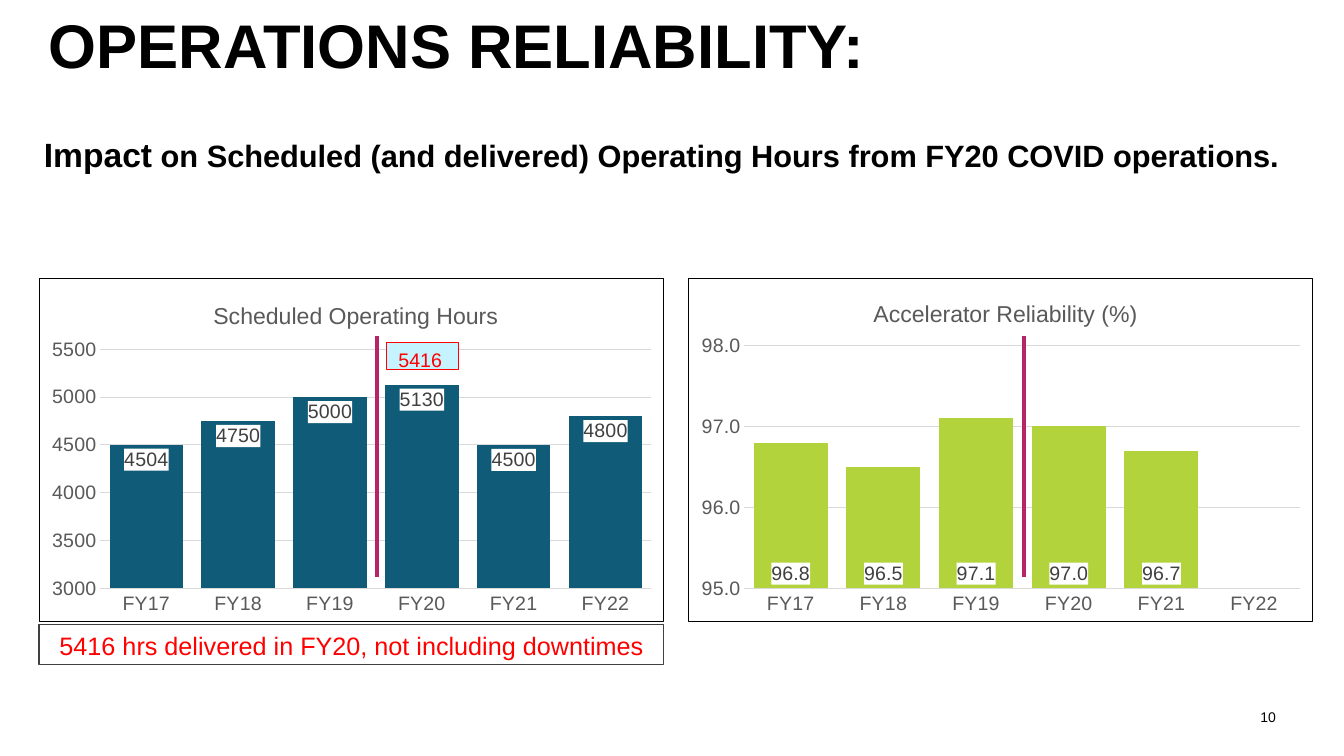
from pptx import Presentation, util as u
from pptx.chart.data import CategoryChartData
from pptx.dml.color import RGBColor
from pptx.enum import chart as ch, shapes, text
from pptx.oxml import parse_xml
from pptx.oxml.ns import nsdecls

TITLE = "OPERATIONS RELIABILITY:"
SUBTITLE = [("Impact", 24),
            (" on Scheduled (and delivered) Operating Hours from FY20 COVID operations.", 22)]
DELIVERED = "5416 "
CAPTION = "5416 hrs delivered in FY20, not including downtimes"
PAGE = "10"
YEARS = ["FY17", "FY18", "FY19", "FY20", "FY21", "FY22"]
# title_at and plot are measured in px on the slide
CHARTS = [
    dict(title="Scheduled Operating Hours", left=39, title_at=(209, 296),
         plot=(100, 349, 552, 240), values=[4504, 4750, 5000, 5130, 4500, 4800],
         axis=(3000, 5500, 500), fmt="0", color="hours",
         labels=ch.XL_LABEL_POSITION.INSIDE_END, covid_x=377),
    dict(title="Accelerator Reliability (%)", left=688, title_at=(869, 294),
         plot=(744, 345, 557, 244), values=[96.8, 96.5, 97.1, 97.0, 96.7, 0],
         axis=(95, 98, 1), fmt="0.0", color="reliability",
         labels=ch.XL_LABEL_POSITION.INSIDE_BASE, covid_x=1024),
]
CHART_TOP, CHART_W, CHART_H = 278, 625, 344
COVID_TOP, COVID_BOTTOM = 336, 577

THEME = dict(
    font="Arial", ink="000000", axis="595959", label="404040", grid="D9D9D9",
    hours="105C78", reliability="B2D33B", divider="B72467", alert="FF0000",
    callout="C5F3FF", caption_line="404040", white="FFFFFF",
    title_pt=44, chart_title_pt=16.5, chart_pt=14, caption_pt=18, page_pt=10,
)
SLIDE_W, SLIDE_H = 1344, 756
EMU_PER_PX = u.Inches(7.5) / SLIDE_H


def px(n):
    return u.Emu(round(n * EMU_PER_PX))


def rgb(name):
    return RGBColor.from_string(THEME[name])


def style_font(font, size, color, bold=False):
    font.name, font.size, font.bold = THEME["font"], u.Pt(size), bold
    font.color.rgb = rgb(color)


def style_line(line, color, width=0.75):
    line.color.rgb = rgb(color)
    line.width = u.Pt(width)


def write(sp, runs, color="ink", bold=False, align=text.PP_ALIGN.LEFT,
          anchor=text.MSO_ANCHOR.TOP):
    """Fill a shape with one paragraph of (text, size) runs."""
    tf = sp.text_frame
    tf.word_wrap, tf.vertical_anchor = True, anchor
    p = tf.paragraphs[0]
    p.alignment = align
    for words, size in runs:
        r = p.add_run()
        r.text = words
        style_font(r.font, size, color, bold)
    return tf


def add_text(slide, box, runs, **style):
    return write(slide.shapes.add_textbox(*map(px, box)), runs, **style)


def add_box(slide, box, words, size, line, fill=None):
    sp = slide.shapes.add_shape(shapes.MSO_SHAPE.RECTANGLE, *map(px, box))
    sp.shadow.inherit = False
    if fill:
        sp.fill.solid()
        sp.fill.fore_color.rgb = rgb(fill)
    else:
        sp.fill.background()
    style_line(sp.line, line)
    write(sp, [(words, size)], "alert", align=text.PP_ALIGN.CENTER)


def set_layout(parent, index, fractions, inner=False):
    """Give a chart element a manual place, as fractions of the chart frame."""
    for old in parent.xpath("c:layout"):
        parent.remove(old)
    target = '<c:layoutTarget val="inner"/>' if inner else ""
    modes = "".join(f'<c:{a}Mode val="edge"/>' for a in "xy")
    places = "".join(f'<c:{a} val="{f:.4f}"/>' for a, f in zip("xywh", fractions))
    parent.insert(index, parse_xml(
        f'<c:layout {nsdecls("c")}><c:manualLayout>{target}{modes}{places}'
        '</c:manualLayout></c:layout>'))


def add_column_chart(slide, c):
    data = CategoryChartData(number_format=c["fmt"])
    data.categories = YEARS
    data.add_series("Series 1", c["values"])
    chart = slide.shapes.add_chart(
        ch.XL_CHART_TYPE.COLUMN_CLUSTERED, px(c["left"]), px(CHART_TOP),
        px(CHART_W), px(CHART_H), data).chart
    style_font(chart.font, THEME["chart_pt"], "ink")
    chart.has_legend = False
    chart.has_title = True
    r = chart.chart_title.text_frame.paragraphs[0].add_run()
    r.text = c["title"]
    style_font(r.font, THEME["chart_title_pt"], "axis")

    cat, val = chart.category_axis, chart.value_axis
    for axis in (cat, val):
        axis.major_tick_mark = axis.minor_tick_mark = ch.XL_TICK_MARK.NONE
        style_font(axis.tick_labels.font, THEME["chart_pt"], "axis")
    style_line(cat.format.line, "grid")
    val.format.line.fill.background()
    val.minimum_scale, val.maximum_scale, val.major_unit = c["axis"]
    val.has_major_gridlines = True
    style_line(val.major_gridlines.format.line, "grid")
    val.tick_labels.number_format = c["fmt"]
    val.tick_labels.number_format_is_linked = False

    plot = chart.plots[0]
    plot.gap_width, plot.overlap, plot.vary_by_categories = 25, 10, False
    series = plot.series[0]
    series.format.fill.solid()
    series.format.fill.fore_color.rgb = rgb(c["color"])
    labels = series.data_labels
    labels.show_value, labels.position = True, c["labels"]
    labels.number_format, labels.number_format_is_linked = c["fmt"], False
    style_font(labels.font, THEME["chart_pt"], "label")

    root = chart._chartSpace
    root.xpath(".//c:ser/c:dLbls/c:numFmt")[0].addnext(parse_xml(
        f'<c:spPr {nsdecls("c", "a")}><a:solidFill><a:srgbClr val="{THEME["white"]}"/>'
        '</a:solidFill></c:spPr>'))
    root.xpath("c:chart")[0].addnext(parse_xml(
        f'<c:spPr {nsdecls("c", "a")}><a:noFill/><a:ln w="{u.Pt(0.75)}"><a:solidFill>'
        f'<a:srgbClr val="{THEME["ink"]}"/></a:solidFill></a:ln></c:spPr>'))

    def place(x, y):
        return (x - c["left"]) / CHART_W, (y - CHART_TOP) / CHART_H

    set_layout(root.xpath("c:chart/c:title")[0], 1, place(*c["title_at"]))
    x, y, w, h = c["plot"]
    set_layout(root.xpath(".//c:plotArea")[0], 0,
               (*place(x, y), w / CHART_W, h / CHART_H), inner=True)


def add_covid_divider(slide, x):
    line = slide.shapes.add_connector(
        shapes.MSO_CONNECTOR.STRAIGHT, px(x), px(COVID_TOP), px(x), px(COVID_BOTTOM))
    style_line(line.line, "divider", 2.25)
    line._element.spPr.append(parse_xml(f'<a:effectLst {nsdecls("a")}/>'))


def main():
    prs = Presentation()
    prs.slide_width, prs.slide_height = px(SLIDE_W), px(SLIDE_H)
    slide = prs.slides.add_slide(prs.slide_layouts[6])

    title = add_text(slide, (39, 1, 1218, 96), [(TITLE, THEME["title_pt"])],
                     bold=True, anchor=text.MSO_ANCHOR.MIDDLE)
    title.paragraphs[0].line_spacing = 0.9
    add_text(slide, (34, 129, 1275, 50), SUBTITLE, bold=True)

    for c in CHARTS:
        add_column_chart(slide, c)
        add_covid_divider(slide, c["covid_x"])
    add_box(slide, (387, 343, 72, 27), DELIVERED, THEME["chart_pt"], "alert", "callout")
    add_box(slide, (39, 625, CHART_W, 40), CAPTION, THEME["caption_pt"], "caption_line")

    page = add_text(slide, (1234, 697, 47, 40), [(PAGE, THEME["page_pt"])],
                    align=text.PP_ALIGN.RIGHT, anchor=text.MSO_ANCHOR.MIDDLE)
    page.margin_left = page.margin_top = page.margin_bottom = 0
    page.margin_right = px(5)
    prs.save("out.pptx")


if __name__ == "__main__":
    main()
